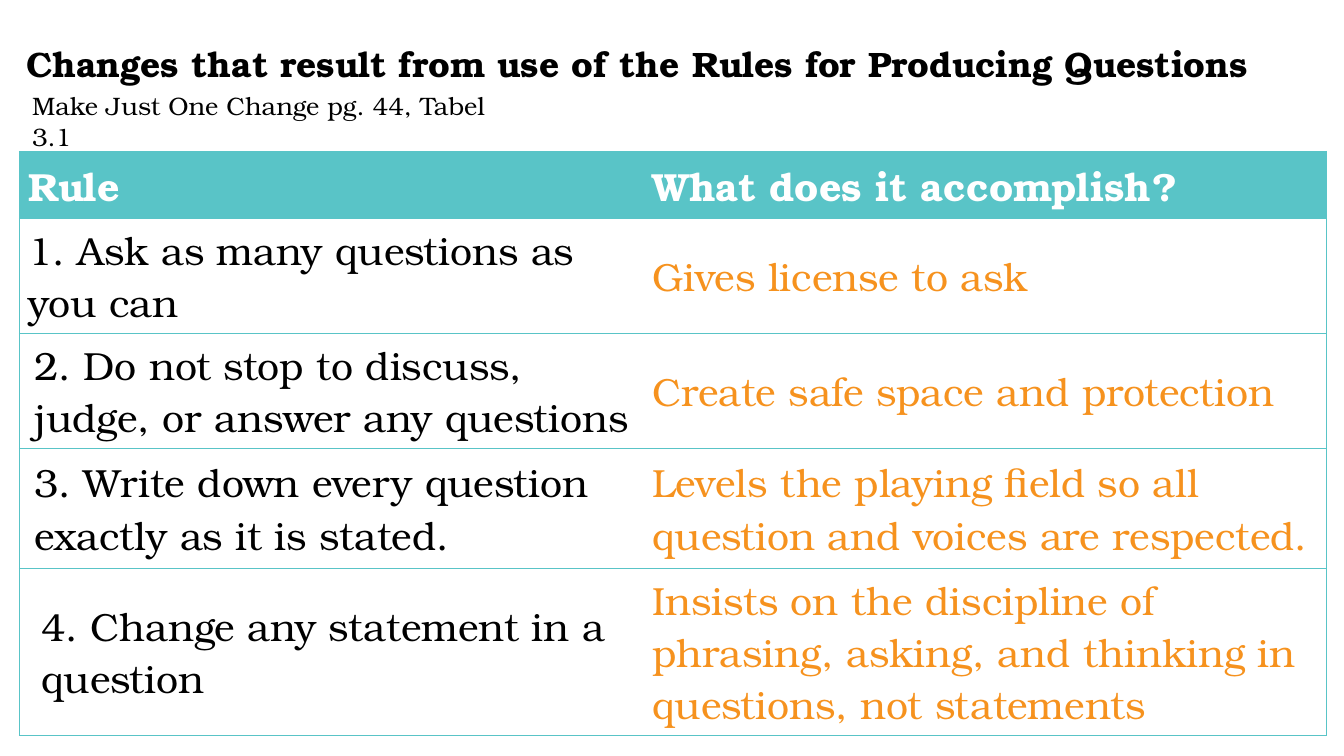
from lxml.etree import SubElement
from pptx import Presentation
from pptx.dml.color import RGBColor
from pptx.enum.text import MSO_ANCHOR
from pptx.oxml.ns import qn
from pptx.util import Pt

PX = 9144  # 100 px to the inch
FONT = "TeX Gyre Bonum"
COLORS = {"teal": "59C4C7", "orange": "F6921E", "black": "000000", "white": "FFFFFF"}
COLUMN_WIDTHS = (619, 677)
ROW_HEIGHTS = (66, 114, 114, 119, 166)
HEADINGS = ("Rule", "What does it accomplish?")
# rule, indent of the rule, what it accomplishes
RULES = (
    ("1. Ask as many questions as you can", 0, "Gives license to ask"),
    ("2. Do not stop to discuss, judge, or answer any questions", 6,
     "Create safe space and protection"),
    ("3. Write down every question exactly as it is stated.", 6,
     "Levels the playing field so all question and voices are respected."),
    ("4. Change any statement in a question", 13,
     "Insists on the discipline of phrasing, asking, and thinking in questions, "
     "not statements"),
)


def add_run(paragraph, text, size, color, bold=False):
    run = paragraph.add_run()
    run.text = text
    run.font.name = FONT
    run.font.size = Pt(size)
    run.font.bold = bold
    run.font.color.rgb = RGBColor.from_string(COLORS[color])


def add_text_box(slide, box):
    shape = slide.shapes.add_textbox(*(length * PX for length in box))
    shape.text_frame.word_wrap = True
    return shape.text_frame


def add_title(slide, box):
    frame = add_text_box(slide, box)
    frame.vertical_anchor = MSO_ANCHOR.MIDDLE
    frame.margin_bottom = 52 * PX
    paragraph = frame.paragraphs[0]
    paragraph.line_spacing = 0.9
    add_run(paragraph, "Changes that result from use of the Rules for Producing Questions",
            25.2, "black", True)


def add_reference(slide, box):
    frame = add_text_box(slide, box)
    add_run(frame.paragraphs[0], "Make Just One Change pg. 44, Tabel 3.1", 18, "black")


def set_borders(cell, sides):
    """Draw thin teal lines on the named sides and none on the others."""
    properties = cell._tc.get_or_add_tcPr()
    for position, side in enumerate("LRTB"):
        line = properties.makeelement(qn(f"a:ln{side}"), {"w": str(Pt(0.5))})
        properties.insert(position, line)
        if side in sides:
            fill = SubElement(line, qn("a:solidFill"))
            SubElement(fill, qn("a:srgbClr"), val=COLORS["teal"])
        else:
            SubElement(line, qn("a:noFill"))


def fill_cell(cell, text, color, background, sides, indent=0, bold=False):
    cell.fill.solid()
    cell.fill.fore_color.rgb = RGBColor.from_string(COLORS[background])
    cell.vertical_anchor = MSO_ANCHOR.MIDDLE
    cell.margin_left = (9 + indent) * PX
    cell.margin_right = 9 * PX
    cell.margin_top = cell.margin_bottom = 5 * PX
    add_run(cell.text_frame.paragraphs[0], text, 28, color, bold)
    set_borders(cell, sides)


def add_rules_table(slide, left, top):
    box = (left, top, sum(COLUMN_WIDTHS), sum(ROW_HEIGHTS))
    table = slide.shapes.add_table(len(ROW_HEIGHTS), len(COLUMN_WIDTHS),
                                   *(length * PX for length in box)).table
    for column, width in zip(table.columns, COLUMN_WIDTHS):
        column.width = width * PX
    for row, height in zip(table.rows, ROW_HEIGHTS):
        row.height = height * PX
    for index, (heading, sides) in enumerate(zip(HEADINGS, ("LTB", "RTB"))):
        fill_cell(table.cell(0, index), heading, "white", "teal", sides, bold=True)
    for index, (rule, indent, result) in enumerate(RULES, 1):
        fill_cell(table.cell(index, 0), rule, "black", "white", "LTB", indent)
        fill_cell(table.cell(index, 1), result, "orange", "white", "RTB")


def main():
    presentation = Presentation()
    presentation.slide_width = 1333 * PX
    presentation.slide_height = 750 * PX
    slide = presentation.slides.add_slide(presentation.slide_layouts[6])
    add_rules_table(slide, 19, 150)
    add_title(slide, (16, 27, 1268, 125))
    add_reference(slide, (22, 85, 477, 40))
    presentation.save("out.pptx")


if __name__ == "__main__":
    main()
